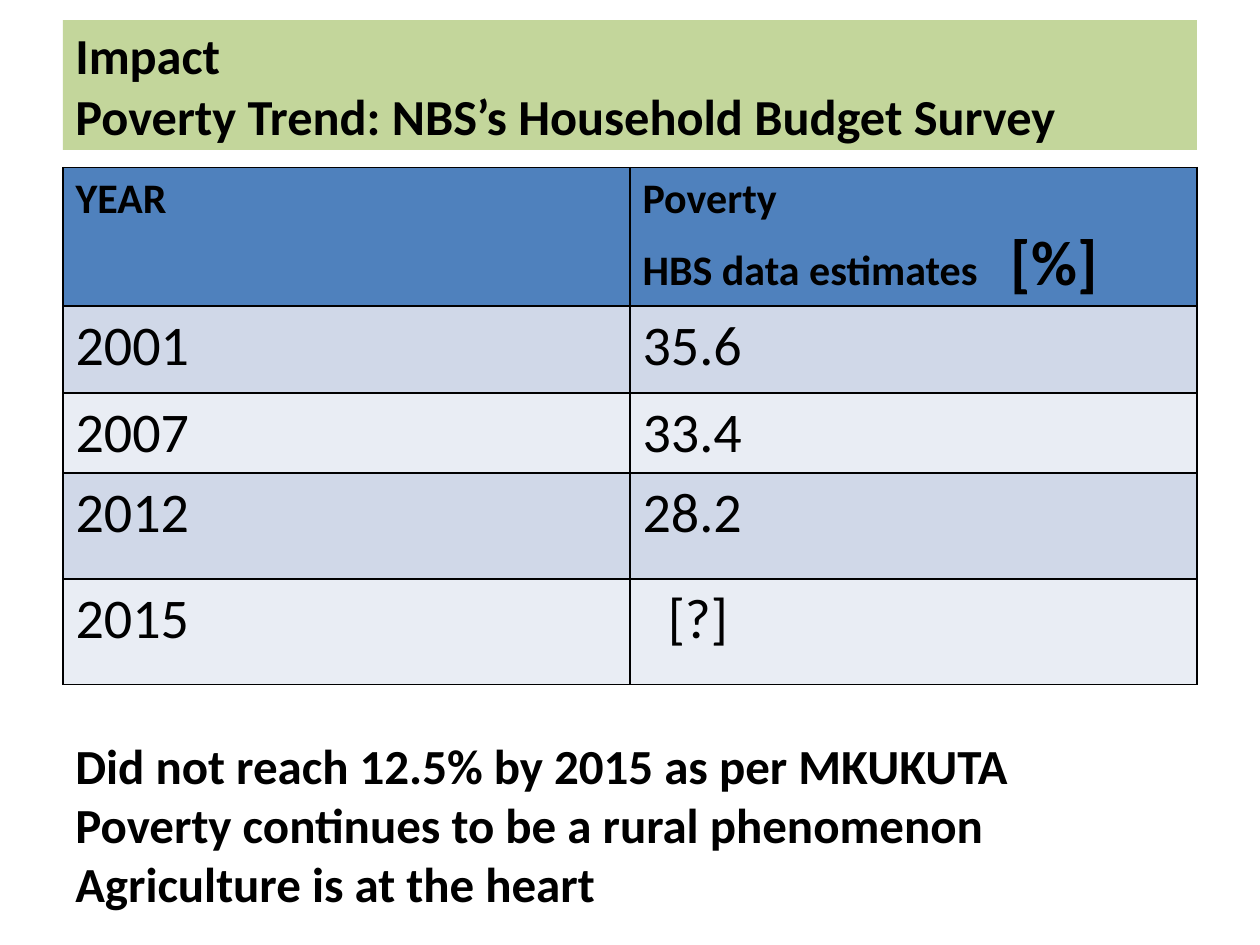
from dataclasses import dataclass

from lxml import etree
from pptx import Presentation
from pptx.dml.color import RGBColor
from pptx.enum import text
from pptx.oxml.ns import qn
from pptx.util import Inches, Pt


@dataclass
class Theme:
    font: str = "Calibri"
    ink: str = "000000"
    banner: str = "C3D69B"
    head: str = "4F81BD"
    bands: tuple = ("D0D8E8", "E9EDF4")
    title: float = 28.8
    label: float = 24
    unit: float = 36
    value: float = 32
    note: float = 28


theme = Theme()


def add_run(para, words, size, bold=True):
    run = para.add_run()
    run.text = words
    run.font.name = theme.font
    run.font.size = Pt(size)
    run.font.bold = bold
    run.font.color.rgb = RGBColor.from_string(theme.ink)


def style_cell(cell, color):
    """Give a cell its fill and a thin line on all four sides."""
    props = cell._tc.get_or_add_tcPr()
    for side in ("lnL", "lnR", "lnT", "lnB"):
        line = etree.SubElement(props, qn(f"a:{side}"), w=str(Pt(1)))
        fill = etree.SubElement(line, qn("a:solidFill"))
        etree.SubElement(fill, qn("a:srgbClr"), val=theme.ink)
    cell.fill.solid()
    cell.fill.fore_color.rgb = RGBColor.from_string(color)


deck = Presentation()
deck.slide_width, deck.slide_height = Inches(10), Inches(7.5)
slide = deck.slides.add_slide(deck.slide_layouts[6])
left, width = Inches(0.5), Inches(9)

# Title banner
title = slide.shapes.add_textbox(left, Inches(0.16), width, Inches(1.03))
title.fill.solid()
title.fill.fore_color.rgb = RGBColor.from_string(theme.banner)
frame = title.text_frame
frame.word_wrap = True
frame.vertical_anchor = text.MSO_ANCHOR.MIDDLE
para = frame.paragraphs[0]
add_run(para, "Impact", theme.title)
para.add_line_break()
add_run(para, "Poverty Trend: NBS’s Household Budget Survey", theme.title)

# Poverty table
rates = [("2001", "35.6"), ("2007", "33.4"), ("2012", "28.2"), ("2015", "[?]")]
heights = [1.02, 0.69, 0.59, 0.84, 0.84]
table = slide.shapes.add_table(
    len(heights), 2, left, Inches(1.33), width, Inches(sum(heights))
).table
for row, height in zip(table.rows, heights):
    row.height = Inches(height)

year, poverty = table.rows[0].cells
for cell in (year, poverty):
    style_cell(cell, theme.head)
add_run(year.text_frame.paragraphs[0], "YEAR", theme.label)
add_run(poverty.text_frame.paragraphs[0], "Poverty", theme.label)
para = poverty.text_frame.add_paragraph()
add_run(para, "HBS data estimates  ", theme.label)
add_run(para, " [%]", theme.unit)

for i, pair in enumerate(rates):
    for j, value in enumerate(pair):
        cell = table.cell(i + 1, j)
        style_cell(cell, theme.bands[i % 2])
        para = cell.text_frame.paragraphs[0]
        add_run(para, value, theme.value, bold=False)
        if value == "[?]":
            para._p.get_or_add_pPr().set("marL", str(Inches(0.2)))

# Conclusions
notes = [
    "Did not reach 12.5% by 2015 as per MKUKUTA",
    "Poverty continues to be a rural phenomenon",
    "Agriculture is at the heart",
]
frame = slide.shapes.add_textbox(left, Inches(5.79), width, Inches(1.51)).text_frame
frame.word_wrap = True
frame.auto_size = text.MSO_AUTO_SIZE.SHAPE_TO_FIT_TEXT
for i, note in enumerate(notes):
    para = frame.add_paragraph() if i else frame.paragraphs[0]
    add_run(para, note, theme.note)

deck.save("out.pptx")
